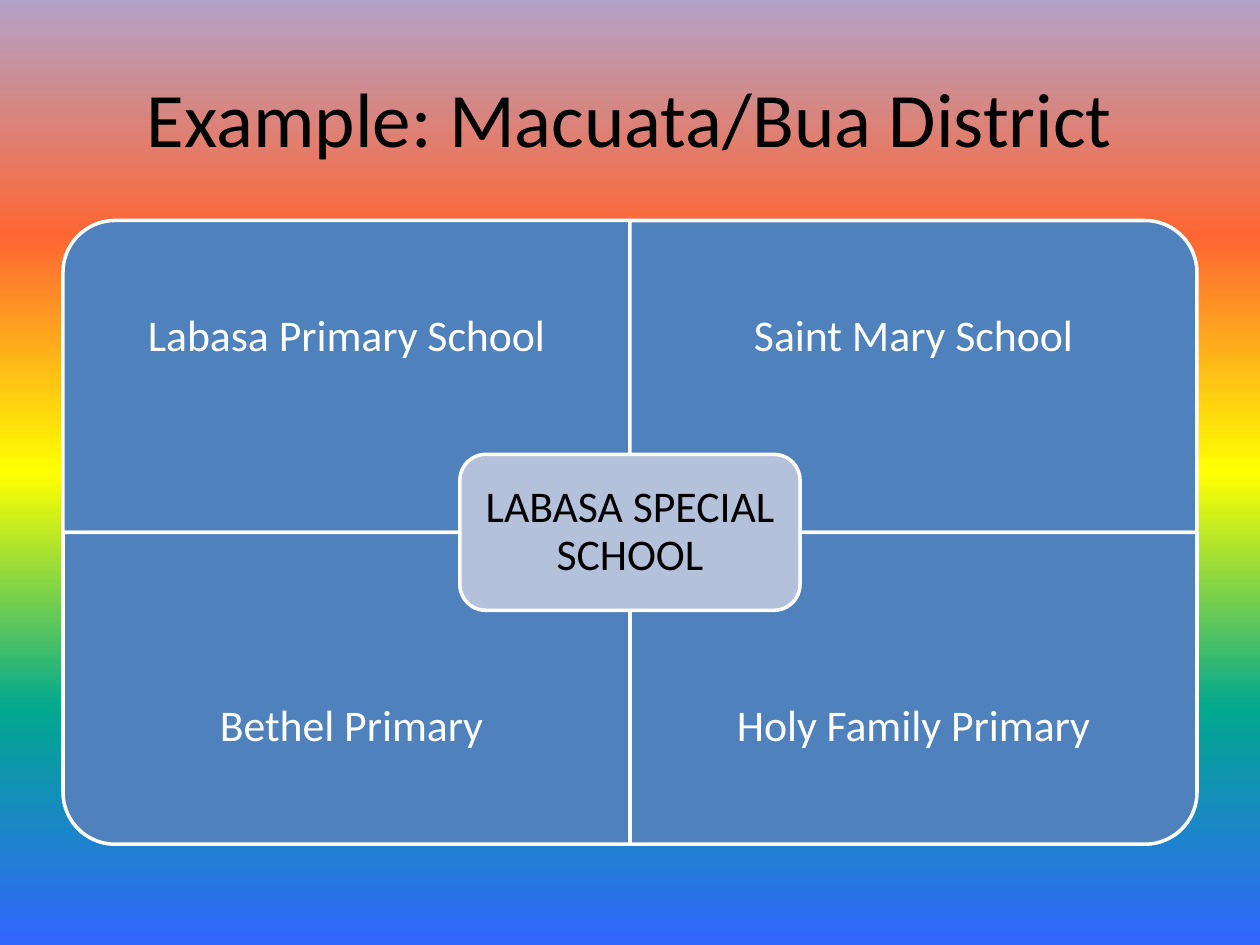
from lxml import etree
from pptx import Presentation
from pptx.dml.color import RGBColor
from pptx.enum.shapes import MSO_SHAPE
from pptx.enum.text import MSO_ANCHOR, PP_ALIGN
from pptx.oxml.ns import qn
from pptx.util import Inches, Pt

QUADRANT, HUB = MSO_SHAPE.ROUND_1_RECTANGLE, MSO_SHAPE.ROUNDED_RECTANGLE
MIDDLE, CENTER = MSO_ANCHOR.MIDDLE, PP_ALIGN.CENTER

TITLE = "Example: Macuata/Bua District"
# school, column, row, rotation that turns the rounded corner outwards
SCHOOLS = [
    ("Labasa Primary School", 0, 0, 270),
    ("Saint Mary School", 1, 0, 0),
    (" Bethel Primary", 0, 1, 180),
    ("Holy Family Primary", 1, 1, 90),
]
CENTRAL_SCHOOL = "LABASA SPECIAL SCHOOL"

THEME = {
    "font": "Calibri",
    "title_size": 44,
    "label_size": 25,
    "dark": "000000",
    "light": "FFFFFF",
    "quadrant": "4F81BD",
    "hub": "B3C1DB",
    "line_width": 2,
    "background": ["B3A2C7", "FF6633", "FFFF00", "01A78F", "3366FF"],
}

LEFT, TOP = 0.5, 1.75
CELL_W, CELL_H = 4.5, 2.475
LABEL_H = CELL_H * 0.75
HUB_W, HUB_H = CELL_W * 0.6, CELL_H * 0.5


def paint_background(slide):
    """Fill the slide with evenly spaced colours, from top to bottom."""
    fill = slide.background.fill
    fill.gradient()
    fill.gradient_angle = 270
    stops = slide.element.find(".//" + qn("a:gsLst"))
    for stop in list(stops):
        stops.remove(stop)
    colours = THEME["background"]
    for index, colour in enumerate(colours):
        position = 100000 * index // (len(colours) - 1)
        stop = etree.SubElement(stops, qn("a:gs"), pos=str(position))
        etree.SubElement(stop, qn("a:srgbClr"), val=colour)


def write(shape, text, size, colour, inset, line_spacing):
    frame = shape.text_frame
    paragraph = frame.paragraphs[0]
    run = paragraph.add_run()
    run.text = text
    margins = ("margin_left", "margin_right", "margin_top", "margin_bottom")
    formats = [
        (frame, {"word_wrap": True, "vertical_anchor": MIDDLE,
                 **dict.fromkeys(margins, Inches(inset))}),
        (paragraph, {"alignment": CENTER, "line_spacing": line_spacing}),
        (run.font, {"name": THEME["font"], "size": Pt(size)}),
    ]
    for target, values in formats:
        for attribute, value in values.items():
            setattr(target, attribute, value)
    run.font.color.rgb = RGBColor.from_string(colour)


def add_label(slide, box, text, size, colour, inset, line_spacing=0.9):
    label = slide.shapes.add_textbox(*map(Inches, box))
    write(label, text, size, colour, inset, line_spacing)


def add_panel(slide, kind, center_x, center_y, width, height, colour, rotation=0):
    """Add an outlined panel; a quarter turn swaps its sides to keep its area."""
    if rotation % 180:
        width, height = height, width
    box = (center_x - width / 2, center_y - height / 2, width, height)
    panel = slide.shapes.add_shape(kind, *map(Inches, box))
    panel.rotation = rotation
    panel.shadow.inherit = False
    panel.fill.solid()
    panel.fill.fore_color.rgb = RGBColor.from_string(colour)
    panel.line.color.rgb = RGBColor.from_string(THEME["light"])
    panel.line.width = Pt(THEME["line_width"])
    return panel


def main():
    presentation = Presentation()
    presentation.slide_width, presentation.slide_height = Inches(10), Inches(7.5)
    slide = presentation.slides.add_slide(presentation.slide_layouts[6])
    paint_background(slide)
    add_label(slide, (0.5, 0.3, 9, 1.25), TITLE, THEME["title_size"],
              THEME["dark"], 0.1, 1.0)

    for school, column, row, rotation in SCHOOLS:
        x, y = LEFT + column * CELL_W, TOP + row * CELL_H
        add_panel(slide, QUADRANT, x + CELL_W / 2, y + CELL_H / 2,
                  CELL_W, CELL_H, THEME["quadrant"], rotation)
        label_y = y + row * (CELL_H - LABEL_H)
        add_label(slide, (x, label_y, CELL_W, LABEL_H), school,
                  THEME["label_size"], THEME["light"], 0.19)

    hub = add_panel(slide, HUB, LEFT + CELL_W, TOP + CELL_H,
                    HUB_W, HUB_H, THEME["hub"])
    write(hub, CENTRAL_SCHOOL, THEME["label_size"], THEME["dark"], 0.1, 0.9)
    presentation.save("out.pptx")


if __name__ == "__main__":
    main()
